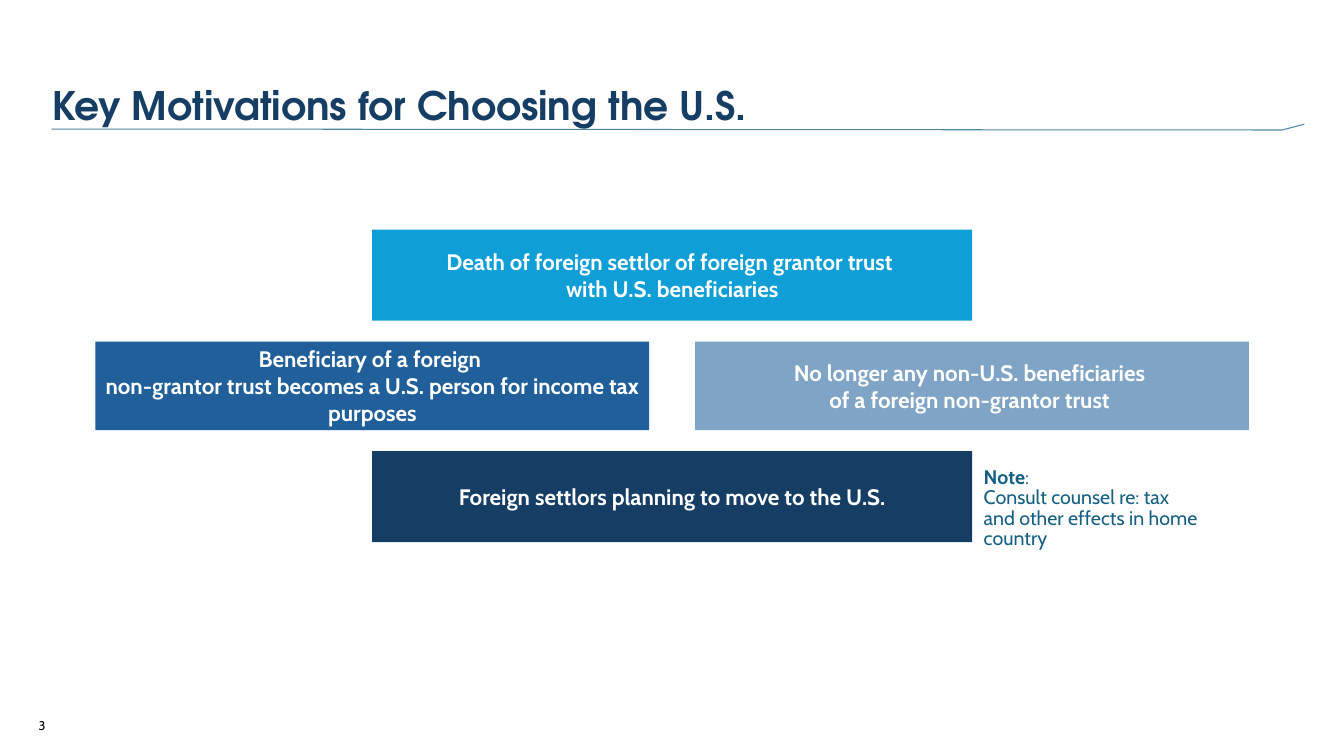
import pptx
import pptx.util
import pptx.dml.color
import pptx.enum.shapes
import pptx.enum.text
import pptx.oxml.ns
import lxml.etree

Pt = pptx.util.Pt
ALIGN = pptx.enum.text.PP_ALIGN
ANCHOR = pptx.enum.text.MSO_ANCHOR

COLORS = {
    "navy": "163E64",
    "blue": "215F9A",
    "sky": "0F9ED5",
    "teal": "156082",
    "white": "FFFFFF",
    "black": "000000",
}
BODY_FONT = "Cabin"
TITLE_FONT = "TeX Gyre Adventor"


def paint(fill, color, opacity=100):
    """Fill with a solid colour, opacity in percent."""
    fill.solid()
    fill.fore_color.rgb = pptx.dml.color.RGBColor.from_string(COLORS[color])
    if opacity < 100:
        rgb = fill._xPr.find(".//" + pptx.oxml.ns.qn("a:srgbClr"))
        alpha = lxml.etree.SubElement(rgb, pptx.oxml.ns.qn("a:alpha"))
        alpha.set("val", str(opacity * 1000))


def set_font(p, size, color, bold=None, name=BODY_FONT):
    p.font.name = name
    p.font.size = Pt(size)
    p.font.bold = bold
    p.font.color.rgb = pptx.dml.color.RGBColor.from_string(COLORS[color])


def set_frame(tf, anchor, inset=0):
    """Wrap the text, with an inset above and below only."""
    tf.word_wrap = True
    tf.vertical_anchor = anchor
    tf.margin_left = tf.margin_right = 0
    tf.margin_top = tf.margin_bottom = Pt(inset)


def add_text(s, box, anchor, inset=0):
    """Add an empty text box and return its first paragraph."""
    tf = s.shapes.add_textbox(*map(Pt, box)).text_frame
    set_frame(tf, anchor, inset)
    return tf.paragraphs[0]


def add_title(s, left, top, width, height):
    p = add_text(s, (left, top, width, height), ANCHOR.BOTTOM)
    p.text = "Key Motivations for Choosing the U.S."
    p.line_spacing = 0.9
    set_font(p, 28, "navy", True, TITLE_FONT)

    bottom = top + height
    builder = s.shapes.build_freeform(Pt(left - 0.5), Pt(bottom))
    builder.add_line_segments(
        [(Pt(left + 878.5), Pt(bottom + 0.7)), (Pt(left + 894.3), Pt(bottom - 3.5))],
        close=False,
    )
    rule = builder.convert_to_shape()
    rule.shadow.inherit = False
    rule.fill.background()
    rule.line.width = Pt(0.75)
    paint(rule.line.fill, "teal", 75)


def add_motivation(s, box, text, color, opacity=100):
    sp = s.shapes.add_shape(pptx.enum.shapes.MSO_SHAPE.RECTANGLE, *map(Pt, box))
    sp.shadow.inherit = False
    sp.line.fill.background()
    paint(sp.fill, color, opacity)
    set_frame(sp.text_frame, ANCHOR.MIDDLE, 7.2)
    p = sp.text_frame.paragraphs[0]
    p.text = text
    p.alignment = ALIGN.CENTER
    p.space_before = p.space_after = Pt(4.5)
    set_font(p, 16, "white", True)


def add_motivations(s, left, top, width, height):
    """Lay out a wide box above and below a row of two."""
    gap = 15
    wide, wide_h = 428.6, 65
    half = 395.6
    half_h = height - 2 * (wide_h + gap)
    center = left + (width - wide) / 2
    middle = top + wide_h + gap
    add_motivation(s, (center, top, wide, wide_h),
                   "Death of foreign settlor of foreign grantor trust \n"
                   "with U.S. beneficiaries", "sky")
    add_motivation(s, (left, middle, half, half_h),
                   "Beneficiary of a foreign \nnon-grantor trust becomes "
                   "a U.S. person for income tax purposes", "blue")
    add_motivation(s, (left + width - half, middle, half, half_h),
                   "No longer any non-U.S. beneficiaries \n"
                   "of a foreign non-grantor trust ", "blue", 57)
    add_motivation(s, (center, top + height - wide_h, wide, wide_h),
                   "Foreign settlors planning to move to the U.S.", "navy")


def add_note(s, left, top, width, height):
    p = add_text(s, (left, top, width, height), ANCHOR.TOP, 7.2)
    p.line_spacing = 0.87
    set_font(p, 14, "teal")
    r = p.add_run()
    r.text = "Note"
    r.font.bold = True
    p.add_run().text = ": "
    p.add_line_break()
    p.add_run().text = "Consult counsel re: tax and other effects in home country"


def add_slide_number(s, left, top, width, height):
    p = add_text(s, (left, top, width, height), ANCHOR.BOTTOM)
    p.text = "3"
    p.alignment = ALIGN.RIGHT
    set_font(p, 9, "black")


def main():
    prs = pptx.Presentation()
    prs.slide_width, prs.slide_height = Pt(960), Pt(540)
    s = prs.slides.add_slide(prs.slide_layouts[6])
    add_slide_number(s, 8.5, 510.5, 24, 13.5)
    add_title(s, 37.4, 18, 864, 74.2)
    add_motivations(s, 68.2, 164, 824, 223.3)
    add_note(s, 702.7, 327, 156.2, 59)
    prs.save("out.pptx")


if __name__ == "__main__":
    main()
